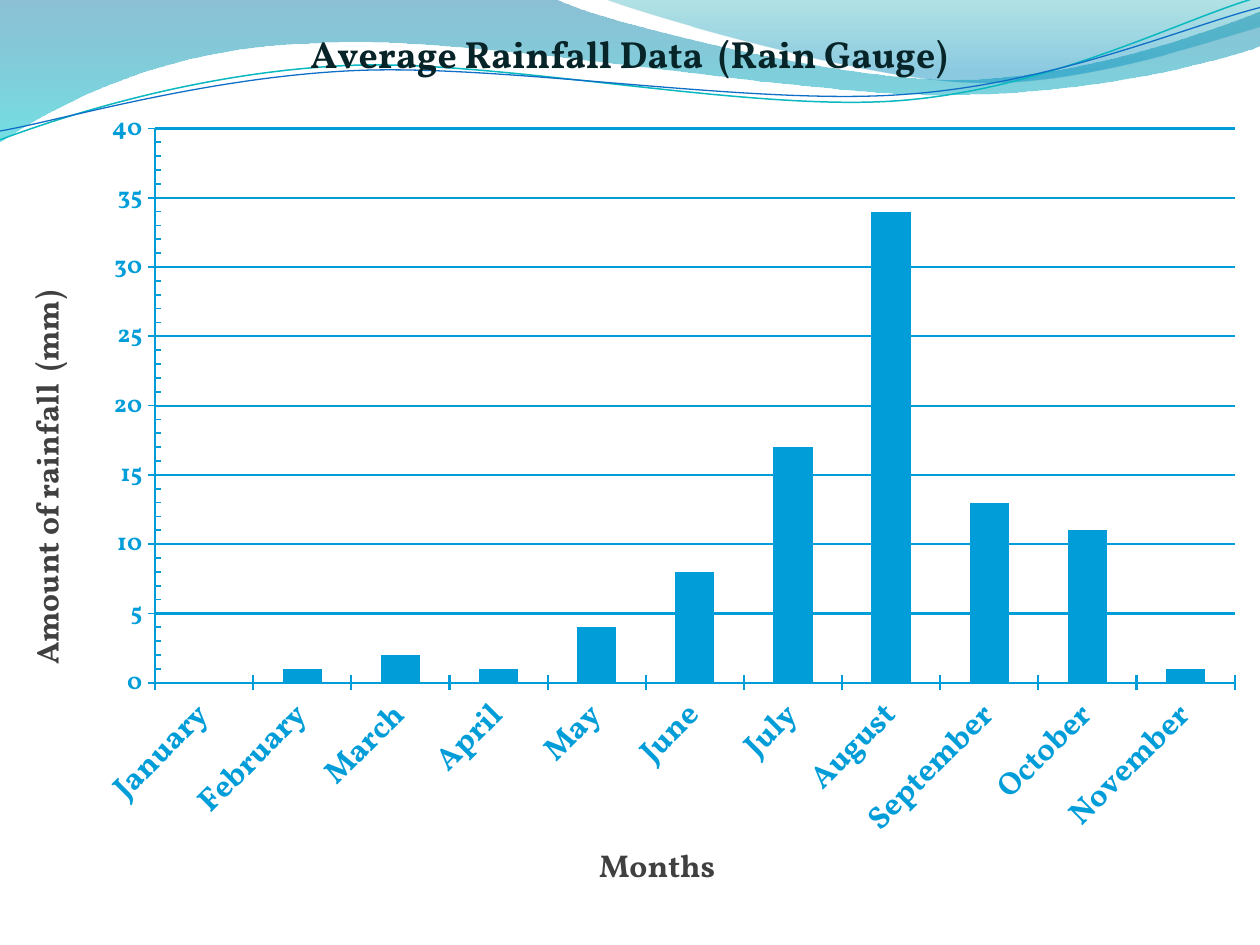
from dataclasses import dataclass

from lxml.etree import SubElement
from pptx import Presentation
from pptx.chart.data import CategoryChartData
from pptx.dml.color import RGBColor
from pptx.enum.chart import XL_CHART_TYPE, XL_TICK_LABEL_POSITION, XL_TICK_MARK
from pptx.oxml import parse_xml
from pptx.oxml.ns import nsdecls, qn
from pptx.util import Inches, Pt

FONT = "Vollkorn"
BLUE = "009DD9"
GREY = "404040"
PAGE_WIDTH, PAGE_HEIGHT = 10, 7.5
RAINFALL = {
    "January": 0, "February": 1, "March": 2, "April": 1,
    "May": 4, "June": 8, "July": 17, "August": 34,
    "September": 13, "October": 11, "November": 1,
}


@dataclass
class Stop:
    position: float
    color: str
    opacity: int


@dataclass
class Wave:
    """Segments of two numbers are straight; those of six are cubic curves."""
    start: tuple
    segments: list
    stops: tuple = ()
    line_color: str = ""
    line_width: float = 0


WAVES = [
    Wave((0, 0), [
        (4.4, -0.01),
        (4.76, 0.17, 6.64, 0.63, 7.58, 0.63),
        (8.53, 0.63, 9.58, 0.26, 10, 0.09),
        (10.01, 0.36),
        (9.83, 0.44, 8.7, 0.76, 7.46, 0.75),
        (6.22, 0.75, 3.82, 0.28, 2.57, 0.34),
        (1.29, 0.36, 0.46, 0.83, -0.01, 1.13),
    ], stops=(Stop(0, "0074A1", 45), Stop(1, "00C6CF", 55))),
    Wave((4.79, -0.01), [
        (5.09, 0.11, 6.82, 0.62, 7.69, 0.65),
        (8.56, 0.69, 9.61, 0.32, 10, 0.21),
        (10, 0),
    ], stops=(Stop(0, "00A1A9", 30), Stop(0.8, "008BBF", 45))),
    Wave((0, 1.11), [
        (0.48, 0.93, 1.58, 0.57, 2.77, 0.52),
        (3.95, 0.47, 5.93, 0.89, 7.13, 0.8),
        (8.33, 0.71, 9.38, 0.15, 9.98, -0.02),
    ], line_color="0AB8BF", line_width=0.85),
    Wave((0, 1.04), [
        (0.47, 0.96, 1.64, 0.61, 2.83, 0.56),
        (4.03, 0.51, 5.97, 0.84, 7.17, 0.75),
        (8.36, 0.67, 9.41, 0.21, 10, 0.06),
    ], line_color="0F6FC6", line_width=0.75),
]


def rgb(color: str) -> RGBColor:
    return RGBColor.from_string(color)


def build_outline(page, wave: Wave):
    """Build the outline, then merge each three points of a curve into one cubic."""
    points = [(Inches(segment[i]), Inches(segment[i + 1]))
              for segment in wave.segments for i in range(0, len(segment), 2)]
    builder = page.shapes.build_freeform(Inches(wave.start[0]), Inches(wave.start[1]))
    builder.add_line_segments(points, close=bool(wave.stops))
    shape = builder.convert_to_shape()
    lines = iter(list(shape.element.spPr.iter(qn("a:lnTo"))))
    for segment in wave.segments:
        line = next(lines)
        if len(segment) == 2:
            continue
        curve = parse_xml(f'<a:cubicBezTo {nsdecls("a")}/>')
        line.addprevious(curve)
        for corner in (line, next(lines), next(lines)):
            curve.append(corner[0])
            corner.getparent().remove(corner)
    return shape


def draw_wave(page, wave: Wave) -> None:
    shape = build_outline(page, wave)
    shape.shadow.inherit = False
    if not wave.stops:
        shape.fill.background()
        shape.line.color.rgb = rgb(wave.line_color)
        shape.line.width = Pt(wave.line_width)
        return
    shape.line.fill.background()
    shape.fill.gradient()
    shape.fill.gradient_angle = 270
    for gradient_stop, stop in zip(shape.fill.gradient_stops, wave.stops):
        gradient_stop.position = stop.position
        gradient_stop.color.rgb = rgb(stop.color)
    for color, stop in zip(shape.element.spPr.iter(qn("a:srgbClr")), wave.stops):
        SubElement(color, qn("a:alpha"), val=str(stop.opacity * 1000))


def set_font(font, size: float, color: str) -> None:
    for name, value in {"name": FONT, "size": Pt(size), "bold": True}.items():
        setattr(font, name, value)
    font.color.rgb = rgb(color)


def set_line(line, width: float) -> None:
    line.color.rgb = rgb(BLUE)
    line.width = Pt(width)


def place(parent, target: str = "", **inches: float) -> None:
    """Give a title or plot area a manual layout, measured in inches."""
    for layout in parent.findall(qn("c:layout")):
        parent.remove(layout)
    modes = [f'<c:{axis}Mode val="edge"/>' for axis in "xy"]
    values = [f'<c:{name} val="{value / (PAGE_WIDTH if name in "xw" else PAGE_HEIGHT)}"/>'
              for name, value in inches.items()]
    layout = parse_xml(
        f'<c:layout {nsdecls("c")}><c:manualLayout>{target}'
        f'{"".join(modes + values)}</c:manualLayout></c:layout>')
    text = parent.find(qn("c:tx"))
    parent.insert(0 if text is None else parent.index(text) + 1, layout)


def write_title(title, element, text: str, size: float, color: str,
                x: float, y: float) -> None:
    span = title.text_frame.paragraphs[0].add_run()
    span.text = text
    set_font(span.font, size, color)
    place(element.find(qn("c:title")), x=x, y=y)


def style_axis(axis, settings: dict, size: float, width: float) -> None:
    for name, value in settings.items():
        setattr(axis, name, value)
    set_font(axis.tick_labels.font, size, BLUE)
    set_line(axis.format.line, width)


def rotate(text_body, degrees: int) -> None:
    body = text_body.find(qn("a:bodyPr"))
    body.set("rot", str(degrees * 60000))
    body.set("vert", "horz")


def draw_chart(page) -> None:
    data = CategoryChartData()
    data.categories = list(RAINFALL)
    data.add_series("Series 1", list(RAINFALL.values()))
    chart = page.shapes.add_chart(
        XL_CHART_TYPE.COLUMN_CLUSTERED, 0, 0,
        Inches(PAGE_WIDTH), Inches(PAGE_HEIGHT), data).chart
    chart.has_legend = False
    chart.font.name = FONT
    chart.font.size = Pt(18)
    chart.font.color.rgb = rgb("000000")

    plot = chart.plots[0]
    plot.gap_width = 150
    plot.vary_by_categories = False
    fill = plot.series[0].format.fill
    fill.solid()
    fill.fore_color.rgb = rgb(BLUE)

    months, amounts = chart.category_axis, chart.value_axis
    style_axis(months, {
        "major_tick_mark": XL_TICK_MARK.CROSS,
        "tick_label_position": XL_TICK_LABEL_POSITION.LOW,
    }, 18, 1.25)
    style_axis(amounts, {
        "minimum_scale": 0, "maximum_scale": 40, "major_unit": 5, "minor_unit": 1,
        "major_tick_mark": XL_TICK_MARK.CROSS,
        "minor_tick_mark": XL_TICK_MARK.INSIDE,
        "has_major_gridlines": True,
    }, 14, 1)
    set_line(amounts.major_gridlines.format.line, 1.25)
    rotate(months._element.find(qn("c:txPr")), -45)

    chart_root = chart._chartSpace.find(qn("c:chart"))
    write_title(chart.chart_title, chart_root, "Average Rainfall Data  (Rain Gauge)",
                21.6, "072428", 2.41, 0.16)
    write_title(months.axis_title, months._element, "Months", 18, GREY, 4.71, 6.65)
    write_title(amounts.axis_title, amounts._element, "Amount of rainfall  (mm)",
                18, GREY, 0.15, 2.26)
    rotate(amounts.axis_title.text_frame._txBody, -90)
    place(chart_root.find(qn("c:plotArea")), '<c:layoutTarget val="inner"/>',
          x=1.23, y=1.02, w=8.57, h=4.4)


def main() -> None:
    deck = Presentation()
    deck.slide_width, deck.slide_height = Inches(PAGE_WIDTH), Inches(PAGE_HEIGHT)
    page = deck.slides.add_slide(deck.slide_layouts[6])
    for wave in WAVES:
        draw_wave(page, wave)
    draw_chart(page)
    deck.save("out.pptx")


if __name__ == "__main__":
    main()
